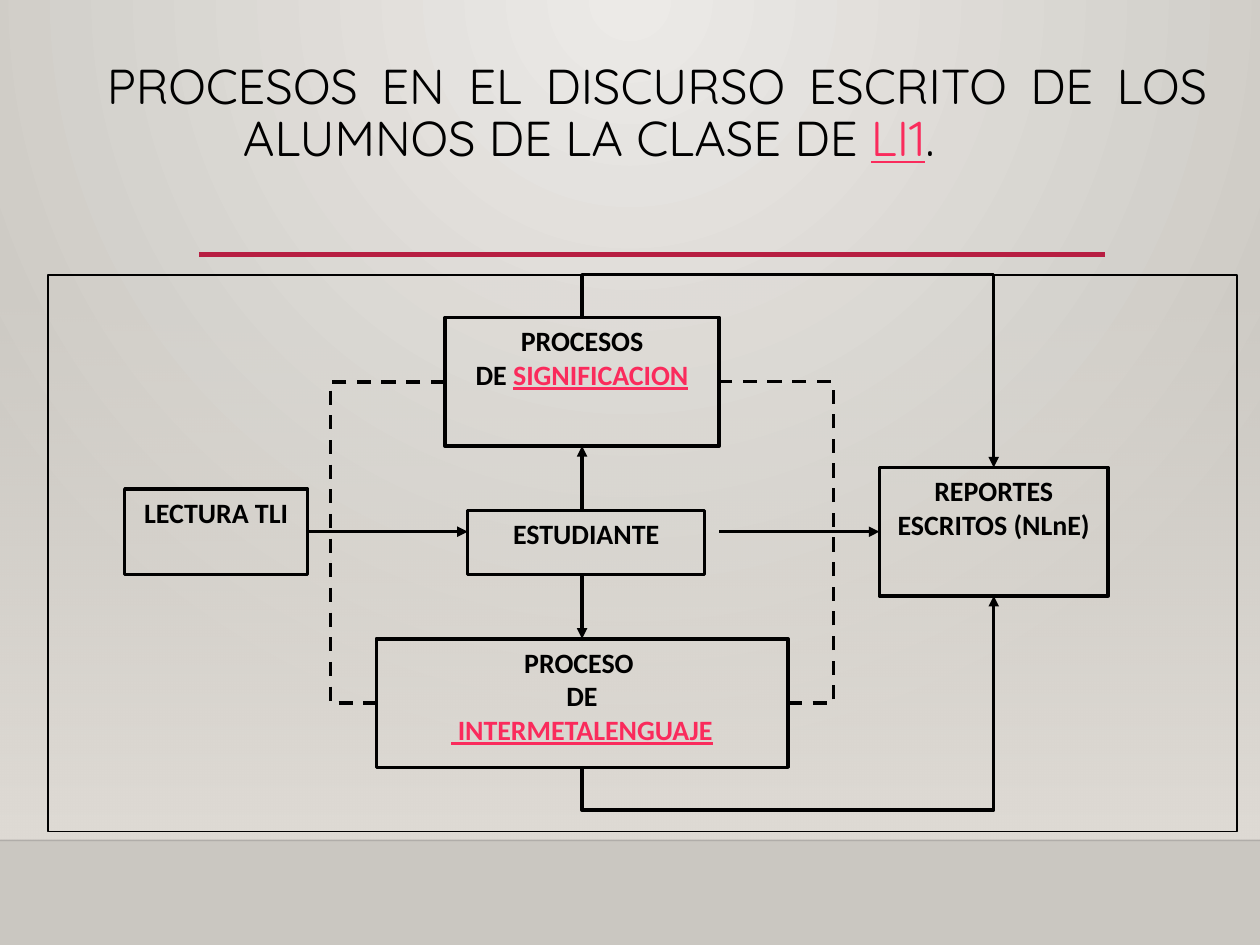
from lxml import etree
from pptx import Presentation
from pptx.dml.color import RGBColor
from pptx.enum.dml import MSO_LINE_DASH_STYLE as DASH
from pptx.enum.shapes import MSO_CONNECTOR_TYPE as CONN, MSO_SHAPE
from pptx.enum.text import MSO_ANCHOR, PP_ALIGN
from pptx.oxml import parse_xml
from pptx.oxml.ns import nsdecls, qn
from pptx.util import Inches, Pt

COLORS = {
    "ink": "000000", "link": "FA2B5C", "rule": "B71E42",
    "light": "ECEAE7", "dark": "CAC7C1", "floor": "DFDBD5", "edge": "000001",
}
W, H = 10, 7.5
COL, ROW = 0.1815, 0.17      # diagram grid, in inches
TOP, LEFT, BOTTOM, RIGHT = range(4)


def rgb(name):
    return RGBColor.from_string(COLORS[name])


def gradient(stops, direction):
    """Gradient fill from (position %, colour, opacity %) stops."""
    gs = "".join(
        f'<a:gs pos="{pos * 1000}"><a:srgbClr val="{COLORS[c]}">'
        f'<a:alpha val="{alpha * 1000}"/></a:srgbClr></a:gs>'
        for pos, c, alpha in stops)
    return parse_xml(f'<a:gradFill {nsdecls("a")} rotWithShape="1">'
                     f'<a:gsLst>{gs}</a:gsLst>{direction}</a:gradFill>')


def swap_gradient(parent, new):
    old = parent.find(qn("a:gradFill"))
    parent.replace(old, new)


def add_runs(p, runs, **base):
    """Add (text, colour) runs; linked words are underlined."""
    for text, color in runs:
        r = p.add_run()
        r.text = text
        for key, value in base.items():
            setattr(r.font, key, value)
        r.font.color.rgb = rgb(color)
        if color == "link":
            r.font.underline = True


def add_rect(s, x, y, w, h, line_width=None):
    sp = s.shapes.add_shape(MSO_SHAPE.RECTANGLE, *map(Inches, (x, y, w, h)))
    sp.shadow.inherit = False
    sp.fill.background()
    if line_width is None:
        sp.line.fill.background()
    else:
        sp.line.color.rgb = rgb("ink")
        sp.line.width = Pt(line_width)
    return sp


def add_line(s, start, end, color="ink", width=2, kind=CONN.STRAIGHT, arrow=False):
    c = s.shapes.add_connector(kind, *map(Inches, (*start, *end)))
    c.line.color.rgb = rgb(color)
    c.line.width = Pt(width)
    if arrow:
        tail = etree.SubElement(c.line._get_or_add_ln(), qn("a:tailEnd"))
        tail.set("type", "triangle")
    etree.SubElement(c._element.spPr, qn("a:effectLst"))
    return c


def set_bend(c, share):
    av = c._element.spPr.find(qn("a:prstGeom")).get_or_add_avLst()
    gd = etree.SubElement(av, qn("a:gd"))
    gd.set("name", "adj1")
    gd.set("fmla", f"val {round(share * 100000)}")


def add_side_elbow(s, start, end, via_x):
    """Dashed elbow that leaves and arrives sideways, turning at via_x."""
    c = add_line(s, start, end, kind=CONN.ELBOW)
    c.line.dash_style = DASH.DASH
    set_bend(c, (via_x - start[0]) / (end[0] - start[0]))


def add_upright_elbow(s, start, end, via_y):
    """Arrowed elbow that leaves and arrives vertically, turning at via_y."""
    c = add_line(s, start, end, kind=CONN.ELBOW, arrow=True)
    (x1, y1), (x2, y2) = start, end
    w, h = abs(y2 - y1), abs(x2 - x1)     # size before the quarter turn
    c.left, c.top = Inches((x1 + x2 - w) / 2), Inches((y1 + y2 - h) / 2)
    c.width, c.height = Inches(w), Inches(h)
    xfrm = c._element.spPr.find(qn("a:xfrm"))
    xfrm.set("rot", "5400000")
    xfrm.set("flipH", str(int(y2 < y1)))
    xfrm.set("flipV", "1")
    set_bend(c, (via_y - y1) / (y2 - y1))


def draw_backdrop(s, floor_top, floor_h):
    # Radial light from the top centre
    s.background.fill.gradient()
    swap_gradient(s.background._cSld.bg.bgPr, gradient(
        [(0, "light", 100), (100, "dark", 100)],
        '<a:path path="circle"><a:fillToRect l="43000" t="0" r="43000" b="100000"/></a:path>'))
    # Wall fading in down to the floor edge
    wall = add_rect(s, 0, floor_top, W, floor_h)
    wall.fill.gradient()
    swap_gradient(wall._element.spPr, gradient(
        [(0, "floor", 0), (100, "floor", 100)], '<a:lin ang="5400000" scaled="0"/>'))
    edge_y = floor_top + floor_h
    edge = add_line(s, (0, edge_y), (W, edge_y), "edge", 1)
    clr = edge.line._get_or_add_ln().find(".//" + qn("a:srgbClr"))
    etree.SubElement(clr, qn("a:alpha")).set("val", "20000")
    # Accent rule below the title
    add_line(s, (1.58, 2.02), (8.77, 2.02), "rule", 2.5)


def draw_title(s, x, y, w, h):
    tf = s.shapes.add_textbox(*map(Inches, (x, y, w, h))).text_frame
    tf.word_wrap = True
    tf.vertical_anchor = MSO_ANCHOR.TOP
    p = tf.paragraphs[0]
    p.alignment = PP_ALIGN.JUSTIFY
    p.line_spacing = 0.9
    pPr = p._p.get_or_add_pPr()
    pPr.set("marL", str(Inches(1.08)))
    pPr.set("indent", str(Inches(-1.08)))
    add_runs(p, [("PROCESOS EN EL DISCURSO ESCRITO DE LOS ALUMNOS DE LA CLASE DE ", "ink"),
                 ("LI1", "link"), (".", "ink")], size=Pt(28), name="Quicksand")


def draw_diagram(s, x, y):
    """Flow diagram; x, y is the grid origin at the left box's column."""
    def at(col, row):
        return x + col * COL, y + row * ROW

    # Frame
    add_rect(s, *at(-3.36, 0), 52 * COL, 26 * ROW, 1)

    # Boxes: column, row, columns wide, rows high, paragraphs
    boxes = {
        "reading": (0, 10, 8, 4, [[("LECTURA TLI", "ink")]]),
        "meaning": (14, 2, 12, 6, [[("PROCESOS", "ink")],
                                   [("DE ", "ink"), ("SIGNIFICACION", "link")]]),
        "student": (15, 11, 10.36, 3, [[("ESTUDIANTE", "ink")]]),
        "reports": (33, 9, 10, 6, [[("REPORTES ESCRITOS (NLnE)", "ink")]]),
        "language": (11, 17, 18, 6, [[("PROCESO ", "ink")], [("DE", "ink")],
                                     [(" INTERMETALENGUAJE", "link")]]),
    }
    shapes = {}
    for key, (col, row, cols, rows, paras) in boxes.items():
        sp = shapes[key] = add_rect(s, *at(col, row), cols * COL, rows * ROW, 2)
        tf = sp.text_frame
        tf.word_wrap = True
        tf.vertical_anchor = MSO_ANCHOR.TOP
        for i, runs in enumerate(paras):
            p = tf.add_paragraph() if i else tf.paragraphs[0]
            p.alignment = PP_ALIGN.CENTER
            add_runs(p, runs, size=Pt(16), name="Calibri", bold=True)

    # Straight arrows: start, end, joined start, joined end
    arrows = [
        ((26, 12), (33, 12), None, ("reports", LEFT)),
        ((8, 12), (15, 12), ("reading", RIGHT), None),
        ((20, 11), (20, 8), None, ("meaning", BOTTOM)),
        ((20, 14), (20, 17), None, ("language", TOP)),
    ]
    for start, end, begin_at, end_at in arrows:
        c = add_line(s, at(*start), at(*end), arrow=True)
        if begin_at:
            c.begin_connect(shapes[begin_at[0]], begin_at[1])
        if end_at:
            c.end_connect(shapes[end_at[0]], end_at[1])

    # Dashed links between the two processes
    add_side_elbow(s, at(29, 20), at(26, 5), at(31, 0)[0])
    add_side_elbow(s, at(14, 5), at(11, 20), at(9, 0)[0])

    # Outer arrows from the processes to the reports
    add_upright_elbow(s, at(20, 23), at(38, 15), at(0, 25)[1])
    add_upright_elbow(s, at(20, 2), at(38, 9), at(0, 0)[1])


def main():
    prs = Presentation()
    prs.slide_width, prs.slide_height = Inches(W), Inches(H)
    s = prs.slides.add_slide(prs.slide_layouts[6])
    draw_backdrop(s, 2.2, 4.47)
    draw_diagram(s, 0.99, 2.18)
    draw_title(s, 0.75, 0.44, 8.93, 1.02)
    prs.save("out.pptx")


if __name__ == "__main__":
    main()
